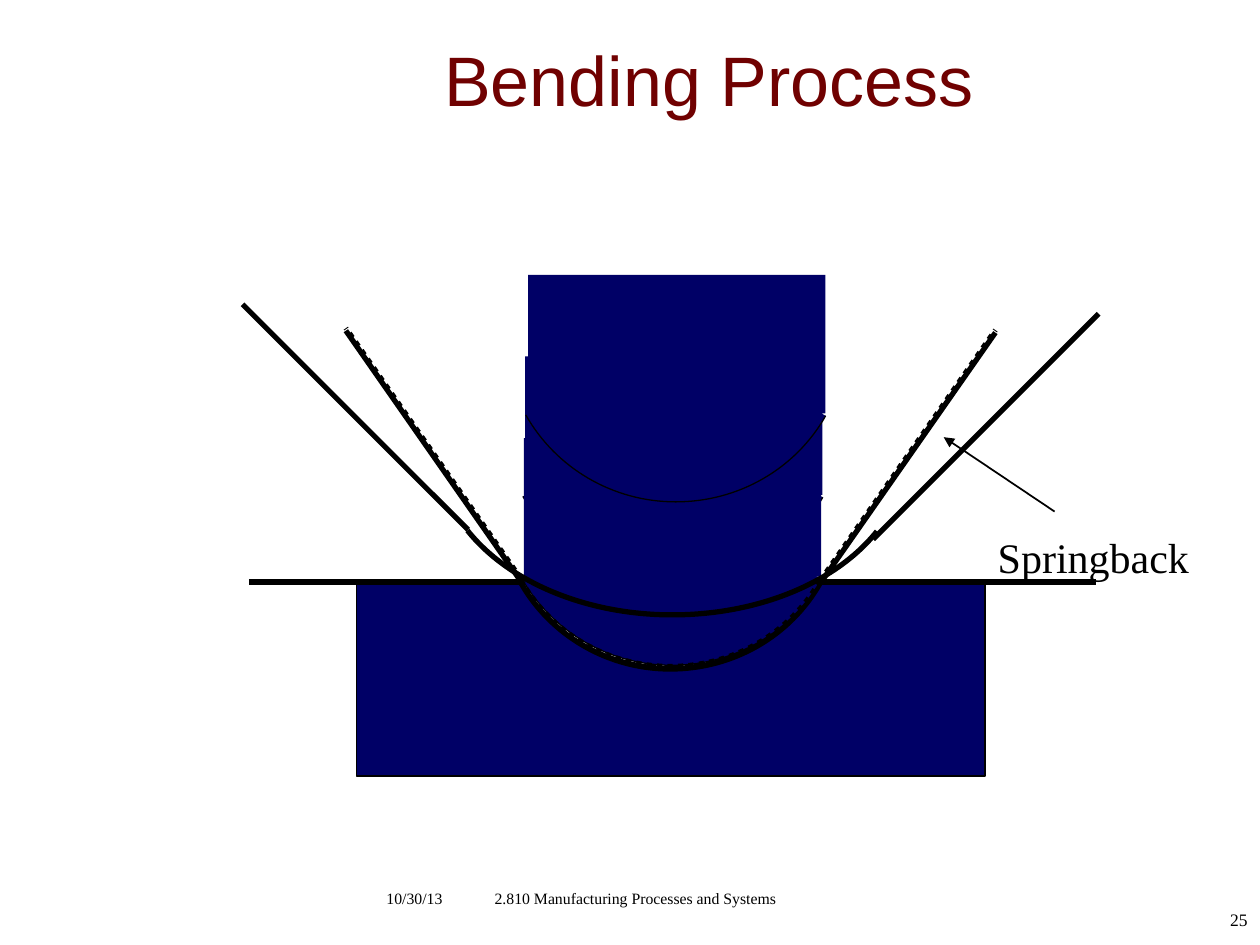
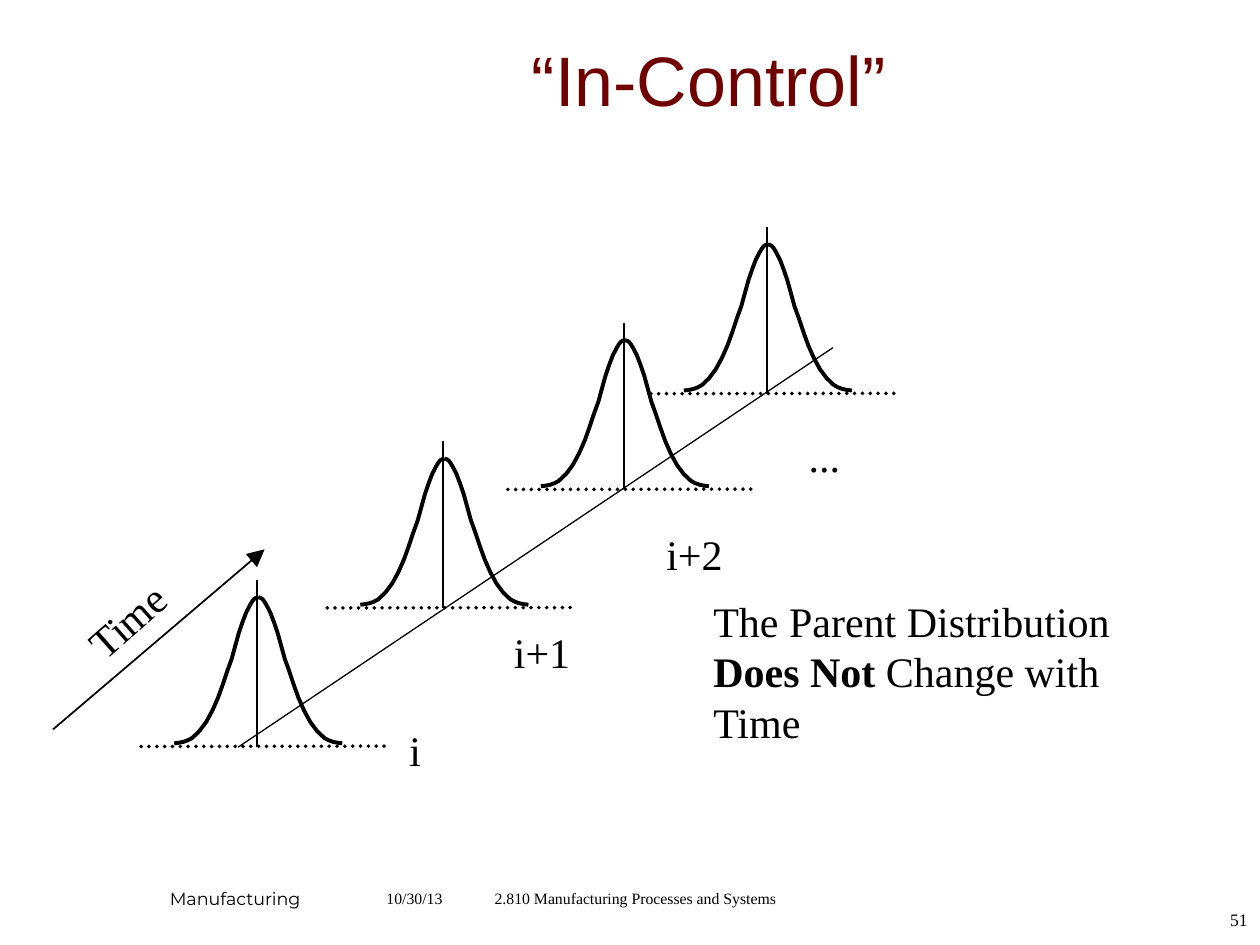
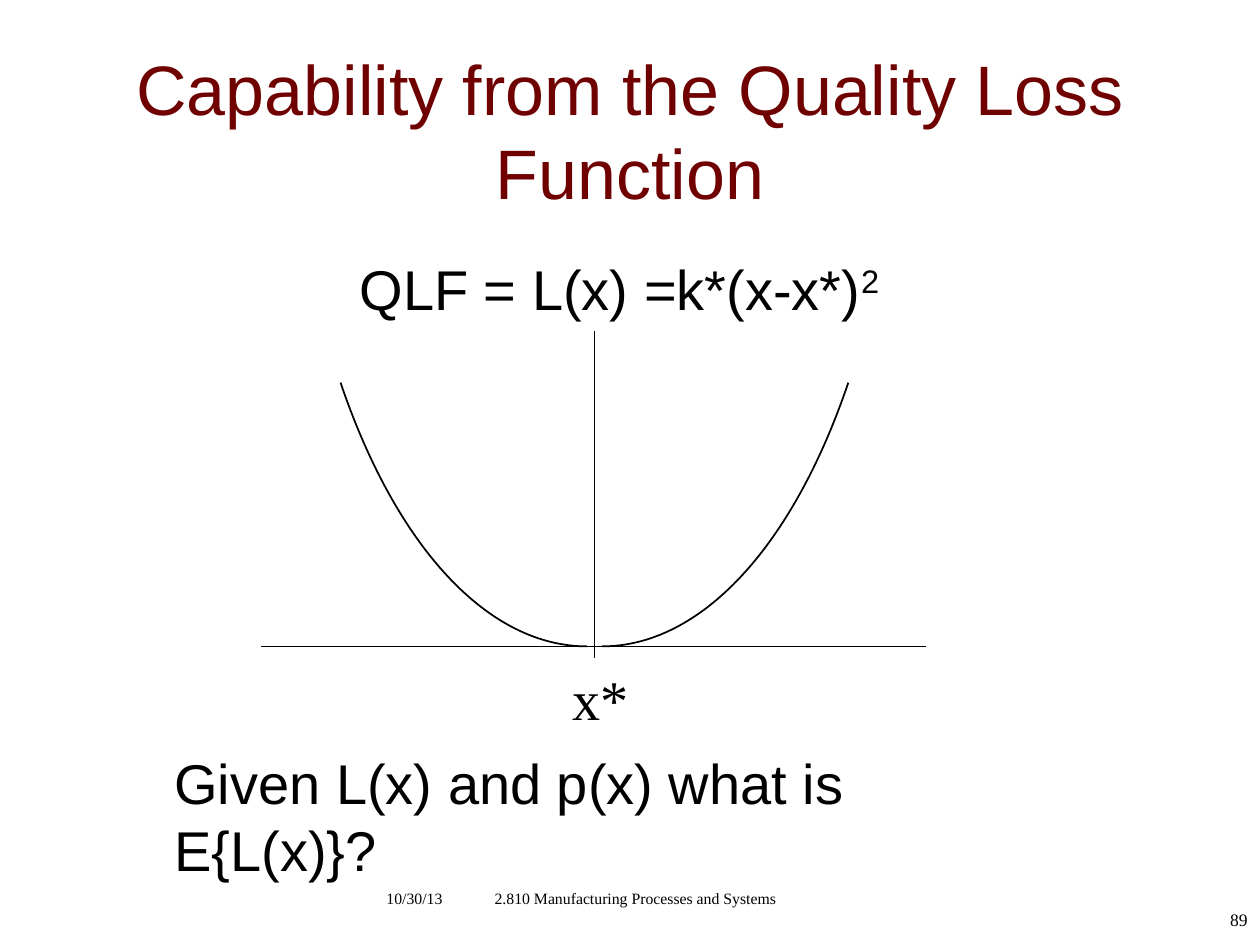
import copy
import dataclasses
import typing

import lxml.etree
import pptx
import pptx.dml.color
import pptx.enum.dml
import pptx.enum.shapes
import pptx.enum.text
import pptx.oxml.ns
import pptx.util

# Page grid: 100 columns by 75 rows
WIDE, HIGH = pptx.util.Inches(10), pptx.util.Inches(7.5)
COL, ROW = WIDE / 100, HIGH / 75

INK = {"black": "000000", "white": "FFFFFF", "navy": "000066", "wine": "700101"}
SANS, SERIF, BRAND = "Arial", "Times New Roman", "Montserrat"
ALIGN = pptx.enum.text.PP_ALIGN
ANCHOR = pptx.enum.text.MSO_ANCHOR
DOT = pptx.enum.dml.MSO_LINE.ROUND_DOT

Point = tuple[float, float]
Slide = typing.Any
Shape = typing.Any
name = pptx.oxml.ns.qn


class Word(typing.NamedTuple):
    text: str
    bold: bool = False
    raised: bool = False


@dataclasses.dataclass
class Label:
    left: float
    top: float
    wide: float
    high: float
    words: list[Word]
    size: float = 24
    font: str = SERIF
    ink: str = "black"
    align: typing.Any = ALIGN.LEFT
    anchor: typing.Any = ANCHOR.TOP
    wrap: bool = False
    turn: float = 0


@dataclasses.dataclass
class Line:
    start: Point
    end: Point
    width: float = 0.75
    dash: typing.Any = None
    arrow: str = ""
    round: bool = False


@dataclasses.dataclass
class Sheet:
    """Bent metal: an arc with a straight leg at each end."""
    left: float
    top: float
    wide: float
    deep: float
    run: float
    rise: float
    gap: float = 0
    dash: typing.Any = None


# Shared drawing tools
def place(col: float, row: float) -> tuple[int, int]:
    return round(col * COL), round(row * ROW)


def color(ink: str) -> pptx.dml.color.RGBColor:
    return pptx.dml.color.RGBColor.from_string(INK[ink])


def stroke(shape: Shape, width: float, dash: typing.Any = None) -> None:
    shape.line.color.rgb = color("black")
    shape.line.width = pptx.util.Pt(width)
    if dash is not None:
        shape.line.dash_style = dash


def paint(shape: Shape, fill: str | None, width: float, dash: typing.Any = None) -> None:
    shape.shadow.inherit = False
    if fill:
        shape.fill.solid()
        shape.fill.fore_color.rgb = color(fill)
    else:
        shape.fill.background()
    if width:
        stroke(shape, width, dash)
    else:
        shape.line.fill.background()


def write(slide: Slide, label: Label) -> None:
    box = slide.shapes.add_textbox(*place(label.left, label.top), *place(label.wide, label.high))
    box.rotation = label.turn
    frame = box.text_frame
    frame.word_wrap = label.wrap
    frame.vertical_anchor = label.anchor
    para = frame.paragraphs[0]
    para.alignment = label.align
    for word in label.words:
        run = para.add_run()
        run.text = word.text
        run.font.name = label.font
        run.font.size = pptx.util.Pt(label.size)
        run.font.bold = word.bold
        run.font.color.rgb = color(label.ink)
        if word.raised:
            run._r.get_or_add_rPr().set("baseline", "30000")


def rule(slide: Slide, line: Line) -> None:
    kind = pptx.enum.shapes.MSO_CONNECTOR.STRAIGHT
    shape = slide.shapes.add_connector(kind, *place(*line.start), *place(*line.end))
    stroke(shape, line.width, line.dash)
    edge = shape.line._get_or_add_ln()
    if line.round:
        edge.set("cap", "rnd")
    if line.arrow:
        lxml.etree.SubElement(edge, name("a:tailEnd"), type="triangle", w=line.arrow, len=line.arrow)
    lxml.etree.SubElement(shape._element.spPr, name("a:effectLst"))


def block(slide: Slide, left: float, top: float, wide: float, high: float, width: float = 0) -> None:
    kind = pptx.enum.shapes.MSO_SHAPE.RECTANGLE
    shape = slide.shapes.add_shape(kind, *place(left, top), *place(wide, high))
    paint(shape, "navy", width)


def trace(slide: Slide, dots: list[Point], close: bool = False) -> Shape:
    first, *rest = [place(*dot) for dot in dots]
    maker = slide.shapes.build_freeform(*first, scale=1.0)
    maker.add_line_segments(rest, close=close)
    return maker.convert_to_shape()


def sector(slide: Slide, knots: list[Point], apex: Point, fill: str | None = None,
           width: float = 0.75, dash: typing.Any = None) -> None:
    """A stroked curve, and the unstroked area between it and the apex."""
    shape = trace(slide, knots + [apex], True)
    area = shape._element.find(".//" + name("a:path"))
    steps = area.findall(name("a:lnTo"))[:-1]
    for i in range(0, len(steps), 3):
        bow = lxml.etree.Element(name("a:cubicBezTo"))
        steps[i].addprevious(bow)
        for step in steps[i:i + 3]:
            bow.append(step[0])
            area.remove(step)
    rim = copy.deepcopy(area)
    for tag in ("a:lnTo", "a:close"):
        rim.remove(rim.find(name(tag)))
    rim.set("fill", "none")
    area.set("stroke", "0")
    area.addprevious(rim)
    paint(shape, fill, width, dash)


# Title and footers
def start(deck: typing.Any, title: str, number: str,
          area: tuple = (18.33, 1.67, 75.83, 9.17)) -> Slide:
    slide = deck.slides.add_slide(deck.slide_layouts[6])
    course = "2.810 Manufacturing Processes and Systems"
    for label in (
        Label(20, 70.05, 60.83, 3.33, [Word(course)], 9, align=ALIGN.CENTER, wrap=True),
        Label(91.67, 71.67, 8.33, 3.33, [Word(number)], 10, align=ALIGN.RIGHT, wrap=True),
        Label(29.69, 70.05, 14.2, 2.5, [Word("10/30/13")], 9, wrap=True),
        Label(*area, [Word(title)], 40, SANS, "wine", ALIGN.CENTER, ANCHOR.MIDDLE, True),
    ):
        write(slide, label)
    return slide


# Slide 1: bending
TIGHT = (23.8, 6.9)
BOW = [(0, 0), (0.1, 0.61), (0.29, 1), (0.5, 1), (0.71, 1), (0.9, 0.62), (1, 0.01)]


def arc(slide: Slide, left: float, top: float, wide: float, deep: float,
        fill: str | None = None, width: float = 0.75, dash: typing.Any = None) -> None:
    knots = [(left + x * wide, top + y * deep) for x, y in BOW]
    sector(slide, knots, (left + wide / 2, top - deep), fill, width, dash)


def punch(slide: Slide, left: float, top: float) -> None:
    arc(slide, left, top, *TIGHT, "navy")
    block(slide, left + 0.18, top - 11.12, 23.6, 11)


def bend(slide: Slide, part: Sheet) -> None:
    arc(slide, part.left, part.top, part.wide, part.deep, None, 3, part.dash)
    right = part.left + part.wide - part.gap
    low = part.top + 0.1 + 2 * part.gap
    for x, y, side in ((right, low, 1), (part.left + 0.05, part.top - 0.05, -1)):
        rule(slide, Line((x, y), (x + side * part.run, y - part.rise), 3, part.dash))


def bending(deck: typing.Any) -> None:
    slide = start(deck, "Bending Process", "25")
    block(slide, 28.3, 46.1, 49.9, 15.5, 1)
    arc(slide, 41.3, 46, *TIGHT, "white")
    punch(slide, 41.5, 39.4)
    rule(slide, Line((19.75, 46.2), (87, 46.2), 3))
    bend(slide, Sheet(41.3, 46.2, *TIGHT, 13.9, 19.9))
    punch(slide, 41.4, 45.9)
    bend(slide, Sheet(37.1, 42.1, 32.5, 6.7, 17.9, 17.9, 0.3))
    punch(slide, 41.73, 32.93)
    bend(slide, Sheet(41.3, 46, *TIGHT, 13.9, 19.9, dash=DOT))
    rule(slide, Line((83.7, 40.6), (74.9, 34.7), 1, arrow="med"))
    write(slide, Label(78.2, 41.7, 17.2, 5, [Word("Springback")]))


# Slide 2: steady bell curves; each pair is distance from centre and height
BELL = [(6.67, 0), (6.28, 0.05), (5.93, 0.12), (5.57, 0.25), (5.24, 0.43), (4.67, 0.97),
        (4.13, 1.7), (3.64, 2.6), (3.2, 3.6), (2.82, 4.65), (2.47, 5.7), (2.11, 6.7),
        (1.82, 7.75), (1.53, 8.8), (1.24, 9.65), (0.95, 10.4), (0.64, 11), (0.49, 11.25),
        (0.34, 11.45), (0.18, 11.55), (0, 11.6)]


def bell(slide: Slide, mid: float, base: float) -> None:
    for side in (-1, 1):
        half = trace(slide, [(mid + side * x, base - y) for x, y in BELL])
        paint(half, None, 2.25)
    rule(slide, Line((mid - 9.3, base + 0.25), (mid + 10.3, base + 0.22), 2.25, DOT, round=True))
    rule(slide, Line((mid - 0.1, base - 13), (mid - 0.1, base + 0.25), 1))


def control(deck: typing.Any) -> None:
    slide = start(deck, "“In-Control”", "51")
    write(slide, Label(12.5, 70, 13.3, 2.7, [Word("Manufacturing")], 10, BRAND, wrap=True))
    rule(slide, Line((18.9, 59.3), (66.1, 27.6)))
    for text, left, top, wide in (("i", 31.5, 57, 2.9), ("i+1", 39.8, 49.25, 6.5),
                                  ("i+2", 51.9, 41.45, 6.5), ("...", 63.2, 33.7, 4.5)):
        write(slide, Label(left, top, wide, 5, [Word(text)]))
    claim = [Word("The Parent Distribution "), Word("Does Not ", True), Word("Change with Time")]
    write(slide, Label(55.63, 46.77, 35.5, 13.1, claim, wrap=True))
    rule(slide, Line((4.2, 57.9), (21, 43.6), 1, arrow="lg"))
    write(slide, Label(5.6, 46.7, 9, 5, [Word("Time")], turn=318.6))
    for mid, base in ((20.5, 59), (35.27, 48), (49.6, 38.6), (60.95, 31)):
        bell(slide, mid, base)


# Slide 3: quality loss
def loss(deck: typing.Any) -> None:
    slide = start(deck, "Capability from the Quality Loss Function", "89", (7.5, 4, 85, 12.5))
    form = [Word("QLF = L(x) =k*(x-x*)"), Word("2", raised=True)]
    write(slide, Label(27.55, 19.7, 43.4, 6.3, form, 32, SANS))
    ask = [Word("Given L(x) and p(x) what is E{L(x)}?")]
    write(slide, Label(12.85, 58.9, 72.4, 6.3, ask, 32, SANS, wrap=True))
    mid, base = 47.18, 51.3
    rule(slide, Line((20.7, base), (73.5, base)))
    rule(slide, Line((mid, 52.2), (mid, 26.3)))
    write(slide, Label(44.45, 52.25, 6.5, 6.3, [Word("x*")], 32))
    for side in (1, -1):
        knots = [(mid + side * x, base - y)
                 for x, y in ((0.6, 0), (8.4, 0), (15.7, 7.8), (20.15, 20.93))]
        sector(slide, knots, (knots[0][0], 2.8), width=1)


def main() -> None:
    deck = pptx.Presentation()
    deck.slide_width, deck.slide_height = WIDE, HIGH
    for draw in (bending, control, loss):
        draw(deck)
    deck.save("out.pptx")


if __name__ == "__main__":
    main()
